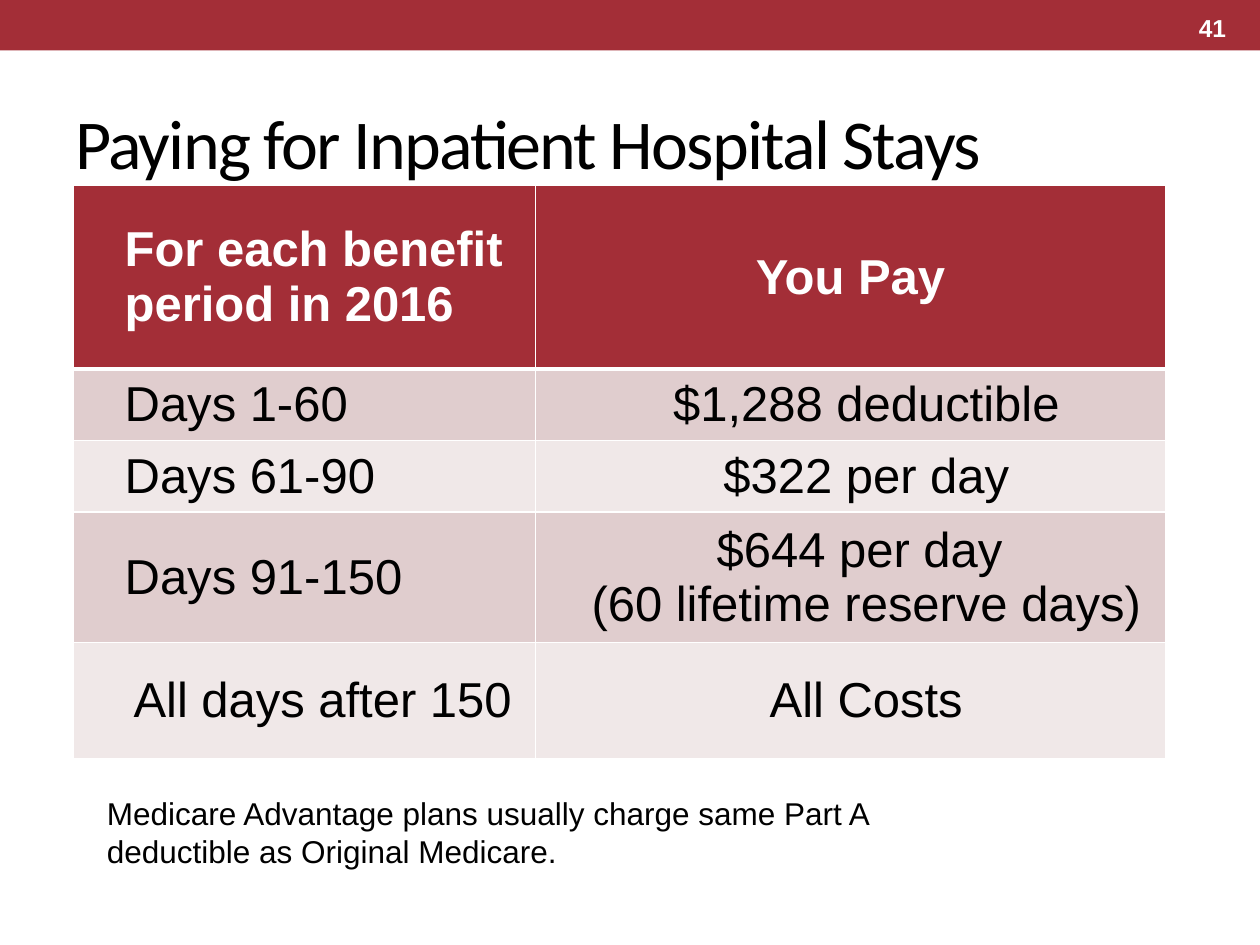
from lxml import etree
from pptx import Presentation
from pptx.dml.color import RGBColor
from pptx.enum.shapes import MSO_SHAPE
from pptx.enum.text import MSO_ANCHOR, MSO_AUTO_SIZE, PP_ALIGN
from pptx.oxml.ns import qn
from pptx.util import Emu, Inches, Pt

CRIMSON = RGBColor(0xA3, 0x2E, 0x37)
ROSE = RGBColor(0xE0, 0xCD, 0xCE)
BLUSH = RGBColor(0xF0, 0xE8, 0xE8)
WHITE = RGBColor(0xFF, 0xFF, 0xFF)
BLACK = RGBColor(0x00, 0x00, 0x00)

# Content
TITLE = "Paying for Inpatient Hospital Stays"
PAGE = "41"
COSTS = [
    ("For each benefit period in 2016", "You Pay"),
    ("Days 1-60", "$1,288 deductible"),
    ("Days 61-90", "$322 per day"),
    ("Days 91-150", "$644 per day \n(60 lifetime reserve days)"),
    ("All days after 150", "All Costs"),
]
NOTE = ("Medicare Advantage plans usually charge same Part A deductible "
        "as Original Medicare.")

COLUMN_WIDTHS = [3.67, 5]
ROW_HEIGHTS = [1.46, 0.55, 0.55, 1.01, 0.92]


def box(left, top, width, height):
    return [Inches(length) for length in (left, top, width, height)]


def style(paragraph, size, color, bold=False, font="Arial", align=PP_ALIGN.LEFT):
    paragraph.alignment = align
    for run in paragraph.runs:
        run.font.name, run.font.size, run.font.bold = font, Pt(size), bold
        run.font.color.rgb = color


def add_text(slide, place, text, anchor, **look):
    text_box = slide.shapes.add_textbox(*place)
    frame = text_box.text_frame
    frame.word_wrap = True
    frame.vertical_anchor = anchor
    frame.text = text
    style(frame.paragraphs[0], **look)
    return frame


def set_borders(cell, bottom):
    """White rules on all four sides; they must come before the cell fill."""
    properties = cell._tc.get_or_add_tcPr()
    widths = {"a:lnL": 1, "a:lnR": 1, "a:lnT": 1, "a:lnB": bottom}
    for position, (side, width) in enumerate(widths.items()):
        line = etree.Element(qn(side), w=str(Pt(width)))
        fill = etree.SubElement(line, qn("a:solidFill"))
        etree.SubElement(fill, qn("a:srgbClr"), val=str(WHITE))
        properties.insert(position, line)


def left_indent(row, column):
    if column == 0:
        return 0.38 if row == len(COSTS) - 1 else 0.31
    return 0.25 if row else 0


def add_costs(slide):
    place = box(0.58, 1.47, sum(COLUMN_WIDTHS), sum(ROW_HEIGHTS))
    costs = slide.shapes.add_table(len(COSTS), len(COLUMN_WIDTHS), *place).table
    for column, width in zip(costs.columns, COLUMN_WIDTHS):
        column.width = Inches(width)
    for row, height in zip(costs.rows, ROW_HEIGHTS):
        row.height = Inches(height)

    for r, entries in enumerate(COSTS):
        header = r == 0
        for c, entry in enumerate(entries):
            cell = costs.cell(r, c)
            cell.fill.solid()
            cell.fill.fore_color.rgb = CRIMSON if header else (BLUSH, ROSE)[r % 2]
            set_borders(cell, bottom=3 if header else 1)
            cell.vertical_anchor = MSO_ANCHOR.MIDDLE
            cell.text = entry
            for paragraph in cell.text_frame.paragraphs:
                style(paragraph, 28, WHITE if header else BLACK, bold=header,
                      align=PP_ALIGN.CENTER if c else PP_ALIGN.LEFT)
                indent = paragraph._p.get_or_add_pPr()
                indent.set("marL", str(Inches(left_indent(r, c))))
                indent.set("indent", "0")


def main():
    deck = Presentation()
    deck.slide_width, deck.slide_height = Inches(10), Inches(7.5)
    slide = deck.slides.add_slide(deck.slide_layouts[5])

    # Top band
    band = slide.shapes.add_shape(MSO_SHAPE.RECTANGLE, Emu(0), Emu(0),
                                  deck.slide_width, Inches(0.4))
    band.shadow.inherit = False
    band.fill.solid()
    band.fill.fore_color.rgb = CRIMSON
    band.line.fill.background()

    # Title, with slightly tightened letters
    title = slide.shapes.title
    title.left, title.top, title.width, title.height = box(0.5, 0.58, 9, 1.08)
    title.text_frame.text = TITLE
    title.text_frame.vertical_anchor = MSO_ANCHOR.MIDDLE
    heading = title.text_frame.paragraphs[0]
    style(heading, 40, BLACK, font="Calibri")
    heading.runs[0].font._element.set("spc", "-100")

    # Page number
    add_text(slide, box(7.5, 0.02, 2.33, 0.4), PAGE, MSO_ANCHOR.MIDDLE,
             size=14, color=WHITE, bold=True, align=PP_ALIGN.RIGHT)

    # Cost table and the note below it
    add_costs(slide)
    note = add_text(slide, box(0.75, 6.25, 6.92, 1.01), NOTE, MSO_ANCHOR.TOP,
                    size=18, color=BLACK)
    note.auto_size = MSO_AUTO_SIZE.SHAPE_TO_FIT_TEXT

    deck.save("out.pptx")


if __name__ == "__main__":
    main()
